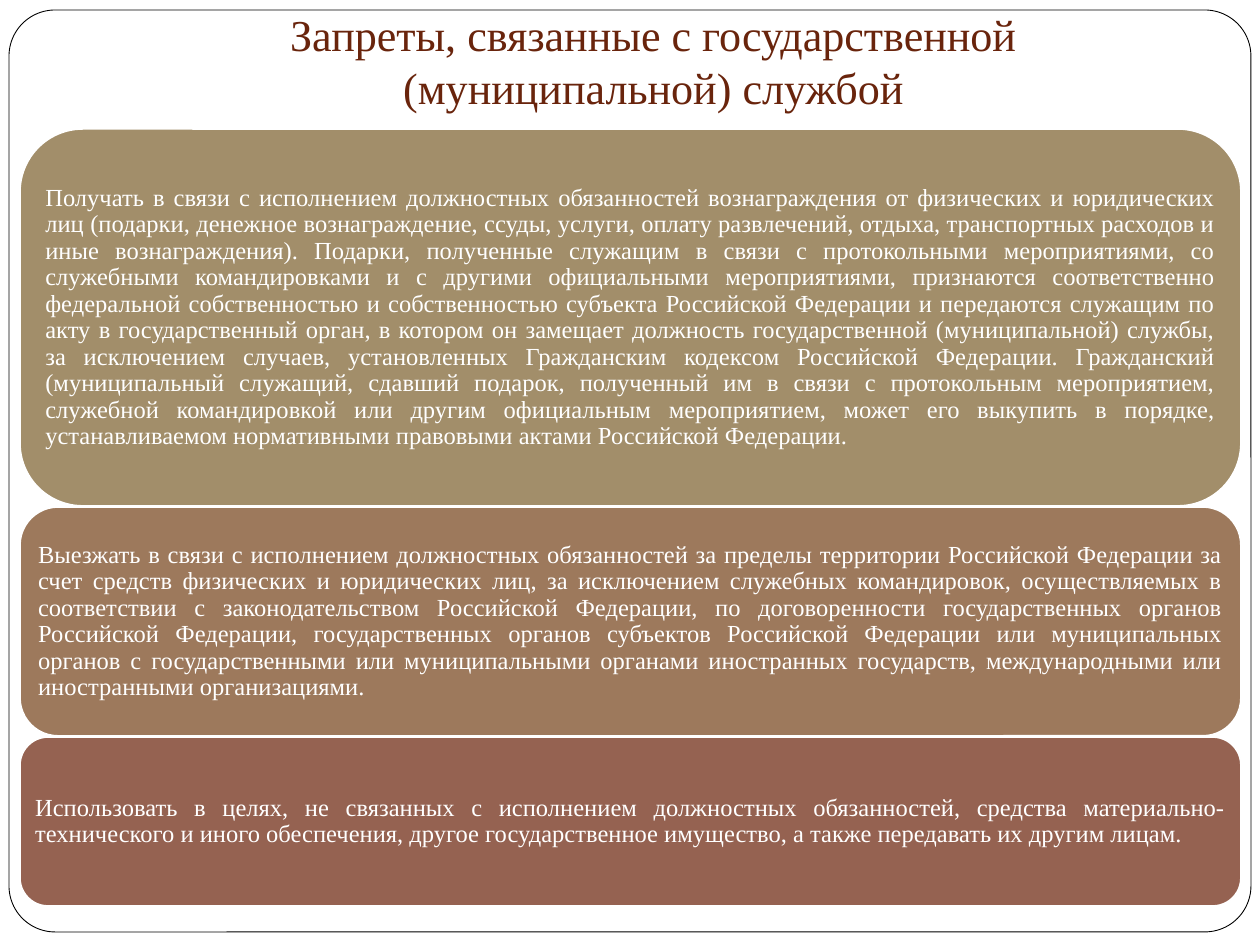
from pptx import Presentation
from pptx.dml.color import RGBColor
from pptx.enum.shapes import MSO_SHAPE
from pptx.enum.text import MSO_ANCHOR, MSO_AUTO_SIZE, PP_ALIGN
from pptx.util import Pt

EMU_PER_PX = 914400 / 126
FONT = "Times New Roman"
COLORS = {
    "white": "FFFFFF",
    "black": "000000",
    "title": "69240C",
    "gifts": "A28E6A",
    "travel": "9D795C",
    "property": "956251",
}

# Each ban: colour, height in px, sentences
BANS = [
    ("gifts", 377, [
        "Получать в связи с исполнением должностных обязанностей вознаграждения от физических "
        "и юридических лиц (подарки, денежное вознаграждение, ссуды, услуги, оплату развлечений, "
        "отдыха, транспортных расходов и иные вознаграждения).",
        "Подарки, полученные служащим в связи с протокольными мероприятиями, со служебными "
        "командировками и с другими официальными мероприятиями, признаются соответственно "
        "федеральной собственностью и собственностью субъекта Российской Федерации и передаются "
        "служащим по акту в государственный орган, в котором он замещает должность "
        "государственной (муниципальной) службы, за исключением случаев, установленных "
        "Гражданским кодексом Российской Федерации.",
        "Гражданский (муниципальный служащий, сдавший подарок, полученный им в связи с "
        "протокольным мероприятием, служебной командировкой или другим официальным "
        "мероприятием, может его выкупить в порядке, устанавливаемом нормативными правовыми "
        "актами Российской Федерации.",
    ]),
    ("travel", 229, [
        "Выезжать в связи с исполнением должностных обязанностей за пределы территории "
        "Российской Федерации за счет средств физических и юридических лиц, за исключением "
        "служебных командировок, осуществляемых в соответствии с законодательством Российской "
        "Федерации, по договоренности государственных органов Российской Федерации, "
        "государственных органов субъектов Российской Федерации или муниципальных органов с "
        "государственными или муниципальными органами иностранных государств, международными "
        "или иностранными организациями.",
    ]),
    ("property", 169, [
        "Использовать в целях, не связанных с исполнением должностных обязанностей, средства "
        "материально-технического и иного обеспечения, другое государственное имущество, а "
        "также передавать их другим лицам.",
    ]),
]


def px(length):
    return round(length * EMU_PER_PX)


def color(name):
    return RGBColor.from_string(COLORS[name])


def set_insets(text_frame, left, top, right, bottom):
    text_frame.margin_left, text_frame.margin_top = px(left), px(top)
    text_frame.margin_right, text_frame.margin_bottom = px(right), px(bottom)


def set_font(paragraph, size, color_name):
    paragraph.font.name = FONT
    paragraph.font.size = Pt(size)
    paragraph.font.color.rgb = color(color_name)


def add_rounded_box(slide, box, fill, line, line_width):
    rounded = slide.shapes.add_shape(MSO_SHAPE.ROUNDED_RECTANGLE, *map(px, box))
    rounded.shadow.inherit = False
    rounded.fill.solid()
    rounded.fill.fore_color.rgb = color(fill)
    rounded.line.color.rgb = color(line)
    rounded.line.width = Pt(line_width)
    return rounded


def add_frame(slide, box):
    frame = add_rounded_box(slide, box, "white", "black", 0.5)
    frame.adjustments[0] = 0.05


def add_bans(slide, left, top, width, gap):
    for fill, height, sentences in BANS:
        ban = add_rounded_box(slide, (left, top, width, height), fill, "white", 1)
        text_frame = ban.text_frame
        text_frame.word_wrap = True
        text_frame.vertical_anchor = MSO_ANCHOR.MIDDLE
        set_insets(text_frame, 7, 7, 7, 7)
        text_frame.text = " ".join(sentences)
        paragraph = text_frame.paragraphs[0]
        paragraph.alignment = PP_ALIGN.JUSTIFY
        paragraph.line_spacing = 0.9
        set_font(paragraph, 14, "white")
        top += height + gap


def place_title(slide, box):
    title = slide.shapes.title
    title.left, title.top, title.width, title.height = map(px, box)
    text_frame = title.text_frame
    text_frame.text = "Запреты, связанные с государственной (муниципальной) службой"
    text_frame.word_wrap = True
    text_frame.auto_size = MSO_AUTO_SIZE.NONE
    text_frame.vertical_anchor = MSO_ANCHOR.BOTTOM
    set_insets(text_frame, 13, 6, 13, 13)
    paragraph = text_frame.paragraphs[0]
    paragraph.alignment = PP_ALIGN.CENTER
    set_font(paragraph, 25.2, "title")
    # Bring the title in front of the filled frame
    slide.shapes._spTree.append(title._element)


def main():
    presentation = Presentation()
    presentation.slide_width, presentation.slide_height = px(1260), px(945)
    slide = presentation.slides.add_slide(presentation.slide_layouts[5])
    add_frame(slide, (9, 10, 1242, 922))
    add_bans(slide, left=20, top=129, width=1221, gap=1)
    place_title(slide, (118, 39, 1071, 87))
    presentation.save("out.pptx")


if __name__ == "__main__":
    main()
